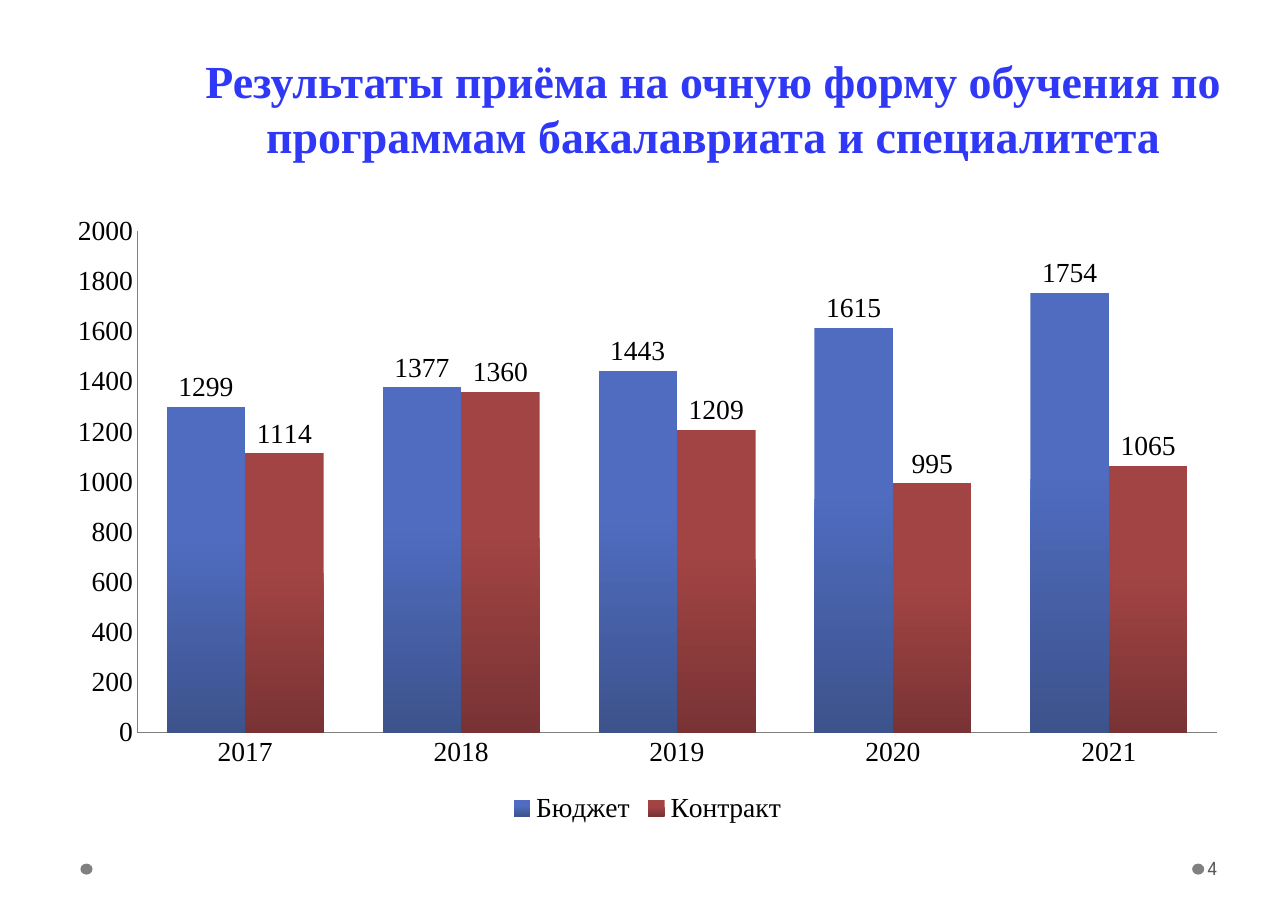
from dataclasses import dataclass

from pptx import Presentation
from pptx import util as u
from pptx.chart import data as cd
from pptx.dml.color import RGBColor
from pptx.enum import chart as ch
from pptx.enum import shapes, text

PX = 9144

BLACK = RGBColor(0x00, 0x00, 0x00)
GRAY = RGBColor(0x80, 0x80, 0x80)
DARK_GRAY = RGBColor(0x59, 0x59, 0x59)
TITLE_BLUE = RGBColor(0x2E, 0x38, 0xF6)
BLUE_TOP = RGBColor(0x4F, 0x6C, 0xC0)
BLUE_BOTTOM = RGBColor(0x3D, 0x53, 0x8C)
RED_TOP = RGBColor(0xA3, 0x44, 0x44)
RED_BOTTOM = RGBColor(0x79, 0x33, 0x34)

SERIF = "Times New Roman"
YEARS = ["2017", "2018", "2019", "2020", "2021"]


@dataclass(frozen=True)
class Box:
    left: int
    top: int
    width: int
    height: int

    def emu(self) -> tuple[u.Emu, ...]:
        return tuple(px(n) for n in (self.left, self.top, self.width, self.height))


@dataclass(frozen=True)
class Admission:
    name: str
    values: tuple[int, ...]
    top: RGBColor
    bottom: RGBColor


@dataclass(frozen=True)
class Label:
    box: Box
    words: str
    font: str
    size: int
    color: RGBColor
    bold: bool
    align: text.PP_ALIGN
    anchor: text.MSO_ANCHOR
    inset_left: int
    inset_right: int


ADMISSIONS = [
    Admission("Бюджет", (1299, 1377, 1443, 1615, 1754), BLUE_TOP, BLUE_BOTTOM),
    Admission("Контракт", (1114, 1360, 1209, 995, 1065), RED_TOP, RED_BOTTOM),
]
DOTS = [Box(left, 784, 11, 10) for left in (73, 1082)]
CHART_BOX = Box(49, 185, 1077, 567)
LABELS = [
    Label(Box(1093, 766, 72, 44), "4", "League Spartan", 13, DARK_GRAY, False,
          text.PP_ALIGN.LEFT, text.MSO_ANCHOR.MIDDLE, 3, 5),
    Label(Box(175, 43, 945, 110),
          "Результаты приёма на очную форму обучения по программам бакалавриата и специалитета",
          SERIF, 30, TITLE_BLUE, True,
          text.PP_ALIGN.CENTER, text.MSO_ANCHOR.BOTTOM, 11, 11),
]


def px(n: int) -> u.Emu:
    return u.Emu(n * PX)


def add_dot(s, box: Box) -> None:
    sp = s.shapes.add_shape(shapes.MSO_SHAPE.OVAL, *box.emu())
    sp.shadow.inherit = False
    sp.fill.solid()
    sp.fill.fore_color.rgb = GRAY
    sp.line.fill.background()


def add_label(s, label: Label) -> None:
    tf = s.shapes.add_textbox(*label.box.emu()).text_frame
    tf.word_wrap = True
    tf.vertical_anchor = label.anchor
    tf.margin_left, tf.margin_right = px(label.inset_left), px(label.inset_right)
    tf.margin_top = tf.margin_bottom = px(5)
    p = tf.paragraphs[0]
    p.text = label.words
    p.alignment = label.align
    p.font.name = label.font
    p.font.size = u.Pt(label.size)
    p.font.bold = label.bold
    p.font.color.rgb = label.color


def style_series(series, admission: Admission) -> None:
    series.invert_if_negative = False
    fill = series.format.fill
    fill.gradient()
    fill.gradient_angle = 270
    first, last = fill.gradient_stops
    first.color.rgb, first.position = admission.top, 0.4
    last.color.rgb, last.position = admission.bottom, 1
    series.format.line.fill.background()
    labels = series.data_labels
    labels.show_value = True
    labels.position = ch.XL_LABEL_POSITION.OUTSIDE_END


def style_axis(axis) -> None:
    axis.has_major_gridlines = False
    axis.major_tick_mark = axis.minor_tick_mark = ch.XL_TICK_MARK.NONE
    axis.format.line.color.rgb = GRAY
    axis.format.line.width = u.Pt(0.75)


def add_admissions_chart(s) -> None:
    data = cd.CategoryChartData(number_format="General")
    data.categories = YEARS
    for admission in ADMISSIONS:
        data.add_series(admission.name, admission.values)
    chart = s.shapes.add_chart(
        ch.XL_CHART_TYPE.COLUMN_CLUSTERED, *CHART_BOX.emu(), data).chart
    chart.has_title = False
    chart.font.name = SERIF
    chart.font.size = u.Pt(18)
    chart.font.color.rgb = BLACK
    chart.has_legend = True
    chart.legend.position = ch.XL_LEGEND_POSITION.BOTTOM
    chart.legend.include_in_layout = False
    for axis in (chart.category_axis, chart.value_axis):
        style_axis(axis)
    chart.value_axis.minimum_scale = 0
    chart.value_axis.maximum_scale = 2000
    chart.value_axis.major_unit = 200
    plot = chart.plots[0]
    plot.vary_by_categories = False
    plot.gap_width = 75
    plot.overlap = 0
    for series, admission in zip(plot.series, ADMISSIONS):
        style_series(series, admission)


def main() -> None:
    prs = Presentation()
    prs.slide_width, prs.slide_height = px(1169), px(827)
    s = prs.slides.add_slide(prs.slide_layouts[6])
    for dot in DOTS:
        add_dot(s, dot)
    add_admissions_chart(s)
    for label in LABELS:
        add_label(s, label)
    prs.save("out.pptx")


if __name__ == "__main__":
    main()
